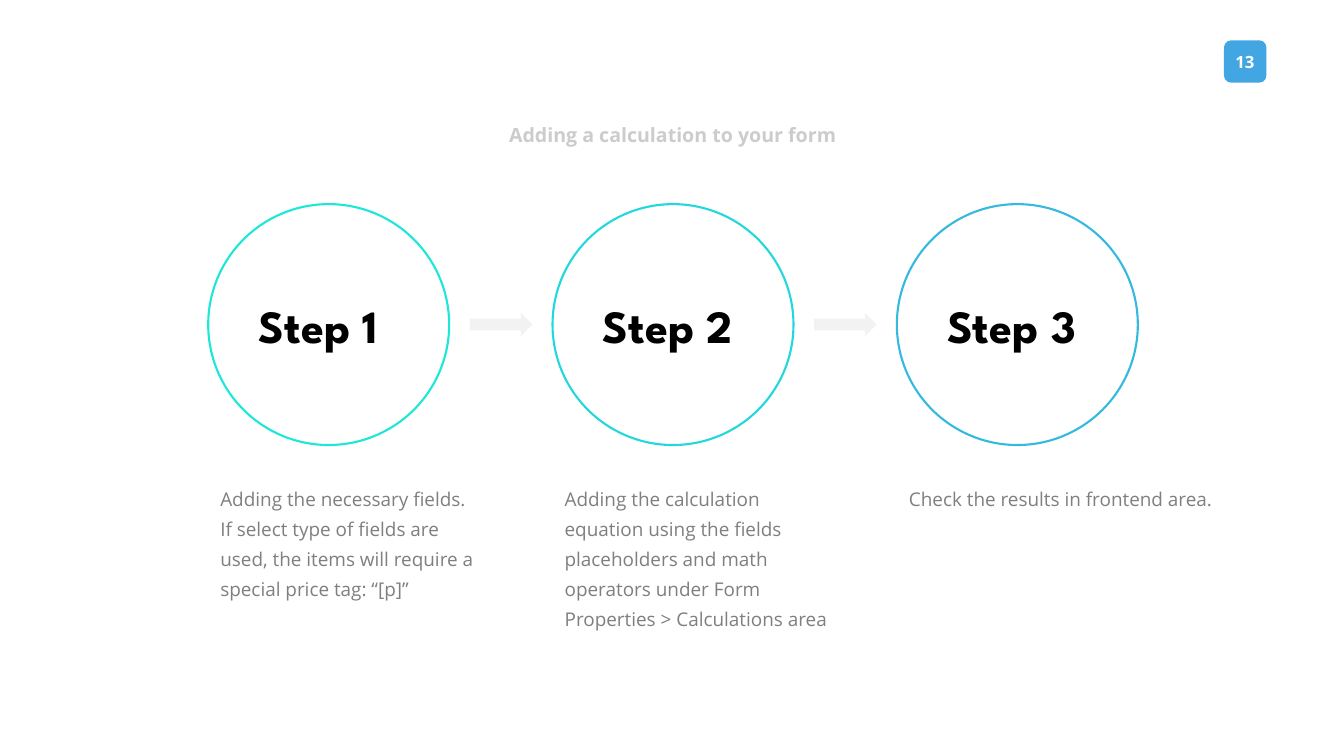
from dataclasses import dataclass

from pptx import Presentation
from pptx.dml.color import RGBColor
from pptx.enum.shapes import MSO_SHAPE
from pptx.enum.text import MSO_ANCHOR, PP_ALIGN
from pptx.util import Inches, Pt

ELLIPSE = MSO_SHAPE.OVAL
ARROW = MSO_SHAPE.RIGHT_ARROW
ROUNDED = MSO_SHAPE.ROUNDED_RECTANGLE
LEFT, CENTER = PP_ALIGN.LEFT, PP_ALIGN.CENTER
TOP, MIDDLE = MSO_ANCHOR.TOP, MSO_ANCHOR.MIDDLE


@dataclass(frozen=True)
class Theme:
    body_font: str = "Open Sans"
    step_font: str = "League Spartan"
    badge: str = "42A6E3"
    white: str = "FFFFFF"
    black: str = "000000"
    title: str = "CCCCCC"
    body: str = "7F7F7F"
    arrow: str = "F2F2F2"
    rings: tuple = ("1DE7D8", "23D8DC", "34B9DF")
    badge_size: int = 24
    title_size: int = 28
    body_size: int = 27
    step_size: int = 66
    body_leading: int = 43
    ring_width: int = 3


class Painter:
    def __init__(self, page, theme):
        self.page = page
        self.theme = theme

    def shape(self, kind, left, top, width, height, fill=None, line=None):
        shape = self.page.shapes.add_shape(
            kind, Inches(left), Inches(top), Inches(width), Inches(height))
        shape.shadow.inherit = False
        if fill:
            shape.fill.solid()
            shape.fill.fore_color.rgb = RGBColor.from_string(fill)
        else:
            shape.fill.background()
        if line:
            shape.line.color.rgb = RGBColor.from_string(line)
            shape.line.width = Pt(self.theme.ring_width)
        else:
            shape.line.fill.background()

    def text(self, words, left, top, width, height, size, color, font=None,
             bold=True, align=LEFT, anchor=TOP, leading=None, inset=(0.1, 0.05)):
        box = self.page.shapes.add_textbox(
            Inches(left), Inches(top), Inches(width), Inches(height))
        frame = box.text_frame
        frame.word_wrap = True
        frame.vertical_anchor = anchor
        frame.margin_left = frame.margin_right = Inches(inset[0])
        frame.margin_top = frame.margin_bottom = Inches(inset[1])
        para = frame.paragraphs[0]
        para.alignment = align
        if leading:
            para.line_spacing = Pt(leading)
        span = para.add_run()
        span.text = words
        span.font.name = font or self.theme.body_font
        span.font.size = Pt(size)
        span.font.bold = bold
        span.font.color.rgb = RGBColor.from_string(color)


STEPS = (
    ("Step 1", 5.53, 2.65, "Adding the necessary fields. If select type of fields "
     "are used, the items will require a special price tag: “[p]”"),
    ("Step 2", 5.92, 3.26, "Adding the calculation equation using the fields "
     "placeholders and math operators under Form Properties > Calculations area"),
    ("Step 3", 6.77, 0.84, "Check the results in frontend area."),
)
FIRST_LEFT, PITCH, RING_TOP, RING = 4.13, 6.83, 4.05, 4.78


def main():
    deck = Presentation()
    deck.slide_width, deck.slide_height = Inches(26.66), Inches(15)
    page = deck.slides.add_slide(deck.slide_layouts[6])
    theme = Theme()
    painter = Painter(page, theme)

    painter.shape(ROUNDED, 24.28, 0.8, 0.84, 0.84, fill=theme.badge)
    painter.text("13", 24.17, 0.93, 1.05, 0.61, theme.badge_size, theme.white,
                 align=CENTER, inset=(0.2, 0.1))
    painter.text("Adding a calculation to your form", 9.96, 2.39, 6.76, 0.57,
                 theme.title_size, theme.title, align=CENTER, anchor=MIDDLE)

    for index, (name, width, height, detail) in enumerate(STEPS):
        left = FIRST_LEFT + index * PITCH
        painter.text(detail, left, 9.4, width, height, theme.body_size, theme.body,
                     bold=False, leading=theme.body_leading, inset=(0.24, 0.12))
        painter.shape(ELLIPSE, left, RING_TOP, RING, RING, line=theme.rings[index])
        if index < len(STEPS) - 1:
            painter.shape(ARROW, left + 5.19, 6.21, 1.24, 0.46, fill=theme.arrow)
        painter.text(name, left + 0.9, 5.84, 2.98, 1.21, theme.step_size,
                     theme.black, font=theme.step_font)

    deck.save("out.pptx")


if __name__ == "__main__":
    main()
